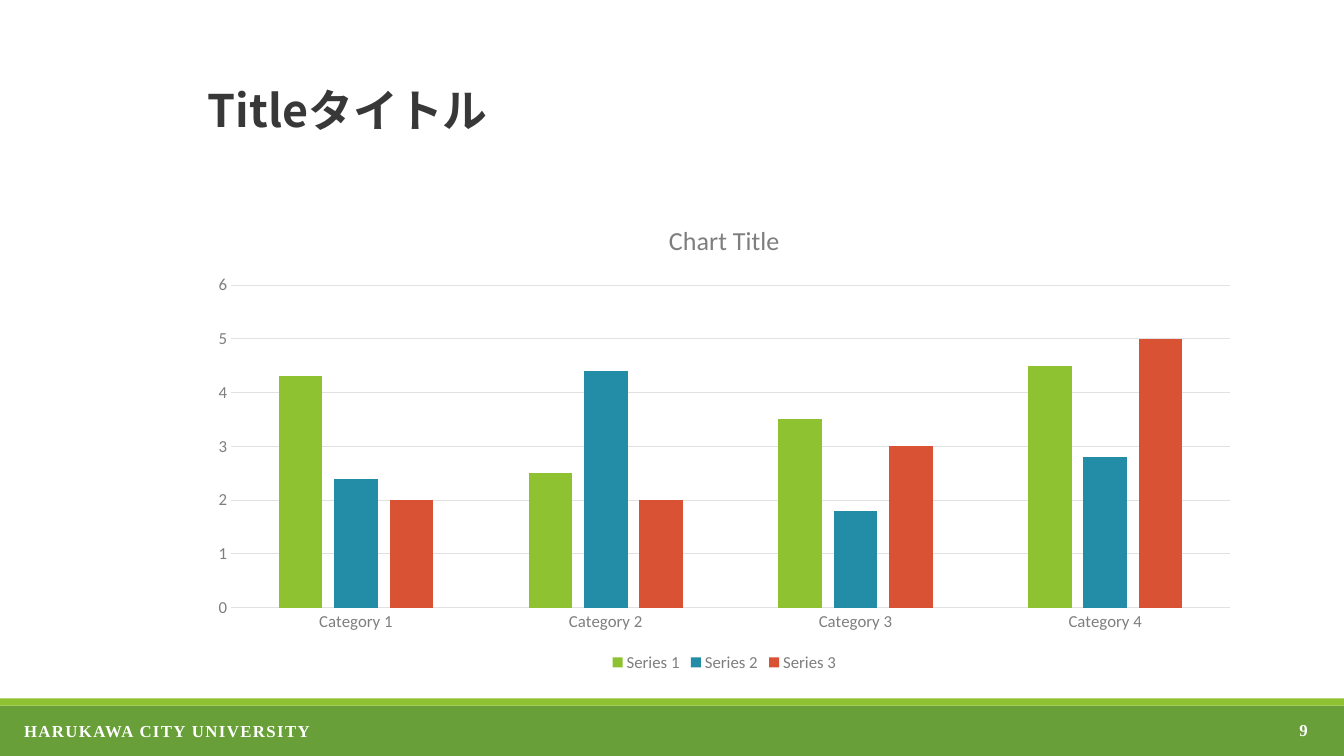
from pptx import Presentation
from pptx import util as u
from pptx.chart.data import CategoryChartData
from pptx.dml.color import RGBColor
from pptx.enum import chart as ch, shapes, text
from pptx.oxml import parse_xml
from pptx.oxml.ns import nsdecls

LATIN, JAPANESE, SERIF = "Calibri", "Noto Sans CJK JP", "Times New Roman"
WHITE, DARK, GRAY, GRID = "FFFFFF", "383838", "7E7E7E", "E1E1E1"
GREEN, LIME = "689F38", "8FC231"
SERIES = [
    ("Series 1", (4.3, 2.5, 3.5, 4.5), LIME),
    ("Series 2", (2.4, 4.4, 1.8, 2.8), "238DA7"),
    ("Series 3", (2, 2, 3, 5), "DA5234"),
]


def color(value):
    return RGBColor.from_string(value)


def box(*lengths):
    return [u.Inches(n) for n in lengths]


def set_font(font, name, size, rgb, bold=False):
    font.name, font.size, font.bold = name, u.Pt(size), bold
    font.color.rgb = color(rgb)


def add_bar(s, top, height, fill):
    sp = s.shapes.add_shape(shapes.MSO_SHAPE.RECTANGLE, *box(0, top, 13.33, height))
    sp.shadow.inherit = False
    sp.fill.solid()
    sp.fill.fore_color.rgb = color(fill)
    sp.line.fill.background()


def add_footer_text(s, words, at, align, anchor, spacing=0):
    tf = s.shapes.add_textbox(*box(*at)).text_frame
    tf.word_wrap = True
    tf.vertical_anchor = anchor
    p = tf.paragraphs[0]
    p.alignment = align
    r = p.add_run()
    r.text = words
    set_font(p.font, SERIF, 12, WHITE, True)
    if spacing:
        r.font._element.set("spc", str(spacing))


def set_title(s, words):
    sp = s.shapes.title
    sp.left, sp.top, sp.width, sp.height = box(1.96, 0.4, 10.45, 1.45)
    tf = sp.text_frame
    tf.vertical_anchor = text.MSO_ANCHOR.MIDDLE
    p = tf.paragraphs[0]
    r = p.add_run()
    r.text = words
    p.alignment = text.PP_ALIGN.LEFT
    p.line_spacing = 0.9
    set_font(r.font, JAPANESE, 32, DARK, True)
    latin = r.font._element.find("{*}latin")
    latin.addnext(parse_xml(f'<a:ea {nsdecls("a")} typeface="{JAPANESE}"/>'))


def style_axis(axis):
    axis.major_tick_mark = axis.minor_tick_mark = ch.XL_TICK_MARK.NONE
    set_font(axis.tick_labels.font, LATIN, 12, GRAY)


def style_line(line):
    line.color.rgb = color(GRID)
    line.width = u.Pt(0.75)


def add_column_chart(s):
    data = CategoryChartData()
    data.categories = [f"Category {n}" for n in range(1, 5)]
    for name, values, _ in SERIES:
        data.add_series(name, values)
    chart = s.shapes.add_chart(
        ch.XL_CHART_TYPE.COLUMN_CLUSTERED, *box(1.96, 2.01, 10.45, 4.7), data
    ).chart
    set_font(chart.font, LATIN, 10, DARK)

    chart.has_title = True
    p = chart.chart_title.text_frame.paragraphs[0]
    p.add_run().text = "Chart Title"
    set_font(p.font, LATIN, 18.6, GRAY)

    chart.has_legend = True
    chart.legend.position = ch.XL_LEGEND_POSITION.BOTTOM
    chart.legend.include_in_layout = False
    set_font(chart.legend.font, LATIN, 12, GRAY)

    plot = chart.plots[0]
    plot.gap_width, plot.overlap, plot.vary_by_categories = 219, -27, False
    for series, (_, _, fill) in zip(plot.series, SERIES):
        series.format.fill.solid()
        series.format.fill.fore_color.rgb = color(fill)

    style_axis(chart.category_axis)
    style_line(chart.category_axis.format.line)
    values = chart.value_axis
    style_axis(values)
    values.minimum_scale, values.maximum_scale, values.major_unit = 0, 6, 1
    values.format.line.fill.background()
    style_line(values.major_gridlines.format.line)


def main():
    prs = Presentation()
    prs.slide_width, prs.slide_height = box(13.33, 7.5)
    s = prs.slides.add_slide(prs.slide_layouts[5])
    add_bar(s, 7, 0.5, GREEN)
    add_bar(s, 6.93, 0.07, LIME)
    add_footer_text(s, "HARUKAWA CITY UNIVERSITY", (0.14, 7.1, 12.48, 0.3),
                    text.PP_ALIGN.LEFT, text.MSO_ANCHOR.TOP, 100)
    add_footer_text(s, "9", (10.07, 7.04, 3, 0.4),
                    text.PP_ALIGN.RIGHT, text.MSO_ANCHOR.MIDDLE)
    add_column_chart(s)
    set_title(s, "Titleタイトル")
    prs.save("out.pptx")


if __name__ == "__main__":
    main()
